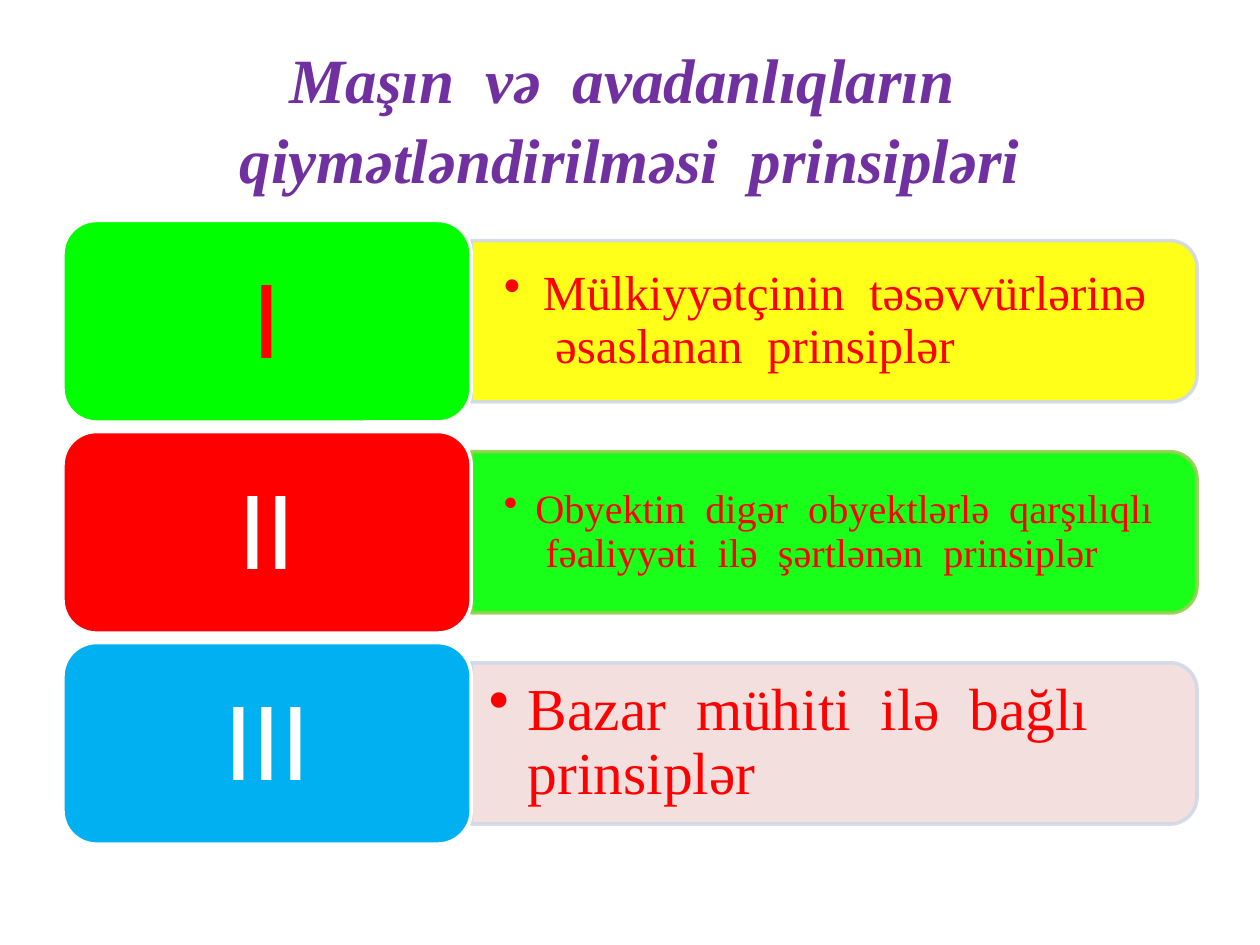
import lxml.etree
import pptx
import pptx.dml.color
import pptx.enum.shapes
import pptx.enum.text
import pptx.oxml.ns
import pptx.util

Inches = pptx.util.Inches
Pt = pptx.util.Pt
RGBColor = pptx.dml.color.RGBColor
MSO_SHAPE = pptx.enum.shapes.MSO_SHAPE
PP_ALIGN = pptx.enum.text.PP_ALIGN
qn = pptx.oxml.ns.qn

PURPLE = RGBColor(0x70, 0x30, 0xA0)
WHITE = RGBColor(0xFF, 0xFF, 0xFF)
RED = RGBColor(0xFF, 0x00, 0x00)
GREEN = RGBColor(0x00, 0xFF, 0x00)
YELLOW = RGBColor(0xFF, 0xFF, 0x00)
BLUE = RGBColor(0x00, 0xB0, 0xF0)
PINK = RGBColor(0xF2, 0xDC, 0xDB)
PALE_BLUE = RGBColor(0xD0, 0xD8, 0xE8)
LEAF_GREEN = RGBColor(0x92, 0xD0, 0x50)


def write_text(shape, text, *, size, color, font="Times New Roman", bold=False, italic=False,
               align=PP_ALIGN.CENTER, spacing=0.9, inset=(0.1, 0.05), bullet_indent=None):
    """Fill the shape with one paragraph; inset is (sides, top and bottom) in inches."""
    frame = shape.text_frame
    frame.word_wrap = True
    frame.vertical_anchor = pptx.enum.text.MSO_ANCHOR.MIDDLE
    frame.margin_left = frame.margin_right = Inches(inset[0])
    frame.margin_top = frame.margin_bottom = Inches(inset[1])
    paragraph = frame.paragraphs[0]
    paragraph.alignment = align
    paragraph.line_spacing = spacing
    if bullet_indent:
        properties = paragraph._p.get_or_add_pPr()
        properties.set("marL", str(Inches(bullet_indent)))
        properties.set("indent", str(-Inches(bullet_indent)))
        lxml.etree.SubElement(properties, qn("a:buChar")).set("char", "•")
    run = paragraph.add_run()
    run.text = text
    run.font.name = font
    run.font.size = Pt(size)
    run.font.bold = bold
    run.font.italic = italic
    run.font.color.rgb = color


def add_panel(preset, left, top, width, height, fill, line, opacity=100):
    """Add a filled, outlined shape; left to height in inches, opacity in percent."""
    panel = slide.shapes.add_shape(preset, Inches(left), Inches(top), Inches(width), Inches(height))
    panel.shadow.inherit = False
    panel.fill.solid()
    panel.fill.fore_color.rgb = fill
    panel.line.color.rgb = line
    panel.line.width = Pt(2)
    if opacity < 100:
        for color in panel._element.spPr.iter(qn("a:srgbClr")):
            lxml.etree.SubElement(color, qn("a:alpha")).set("val", str(opacity * 1000))
    return panel


presentation = pptx.Presentation()
presentation.slide_width = Inches(10)
presentation.slide_height = Inches(7.5)
slide = presentation.slides.add_slide(presentation.slide_layouts[6])

title = slide.shapes.add_textbox(Inches(0.5), Inches(0.3), Inches(9), Inches(1.25))
write_text(title, "Maşın  və  avadanlıqların  qiymətləndirilməsi  prinsipləri",
           size=36, color=PURPLE, bold=True, italic=True, spacing=1.05)

# numeral, its colour, block fill, principle, size, bullet indent, inset, bar fill, bar line
principles = [
    ("I", RED, GREEN, "Mülkiyyətçinin  təsəvvürlərinə  əsaslanan  prinsiplər",
     28, 0.31, (0.26, 0.13), YELLOW, PALE_BLUE),
    ("II", WHITE, RED, "Obyektin  digər  obyektlərlə  qarşılıqlı  fəaliyyəti  ilə  şərtlənən  prinsiplər",
     23, 0.25, (0.26, 0.13), GREEN, LEAF_GREEN),
    ("III", WHITE, BLUE, "Bazar  mühiti  ilə  bağlı  prinsiplər",
     34, 0.31, (0.14, 0.07), PINK, PALE_BLUE),
]
LEFT, FIRST_TOP = 0.5, 1.75
BLOCK_WIDTH, BLOCK_HEIGHT = 3.24, 1.6
BAR_LENGTH, BAR_THICKNESS = 5.76, 1.28
TEXT_WIDTH, TEXT_HEIGHT = 5.7, 1.15
ROW_STEP = 1.675
bar_left = LEFT + BLOCK_WIDTH

for row, (numeral, numeral_color, block_fill, principle, size, indent, inset,
          bar_fill, bar_line) in enumerate(principles):
    top = FIRST_TOP + row * ROW_STEP
    middle = top + BLOCK_HEIGHT / 2

    # The bar is upright before its quarter turn, so it is placed around its centre
    bar = add_panel(MSO_SHAPE.ROUND_2_SAME_RECTANGLE,
                    bar_left + (BAR_LENGTH - BAR_THICKNESS) / 2, middle - BAR_LENGTH / 2,
                    BAR_THICKNESS, BAR_LENGTH, bar_fill, bar_line, opacity=90)
    bar.rotation = 90

    bar_text = slide.shapes.add_textbox(Inches(bar_left), Inches(middle - TEXT_HEIGHT / 2),
                                        Inches(TEXT_WIDTH), Inches(TEXT_HEIGHT))
    write_text(bar_text, principle, size=size, color=RED, align=PP_ALIGN.LEFT,
               inset=inset, bullet_indent=indent)

    block = add_panel(MSO_SHAPE.ROUNDED_RECTANGLE, LEFT, top, BLOCK_WIDTH, BLOCK_HEIGHT,
                      block_fill, WHITE)
    write_text(block, numeral, size=65, color=numeral_color, font="Calibri", inset=(0.27, 0.14))

presentation.save("out.pptx")
